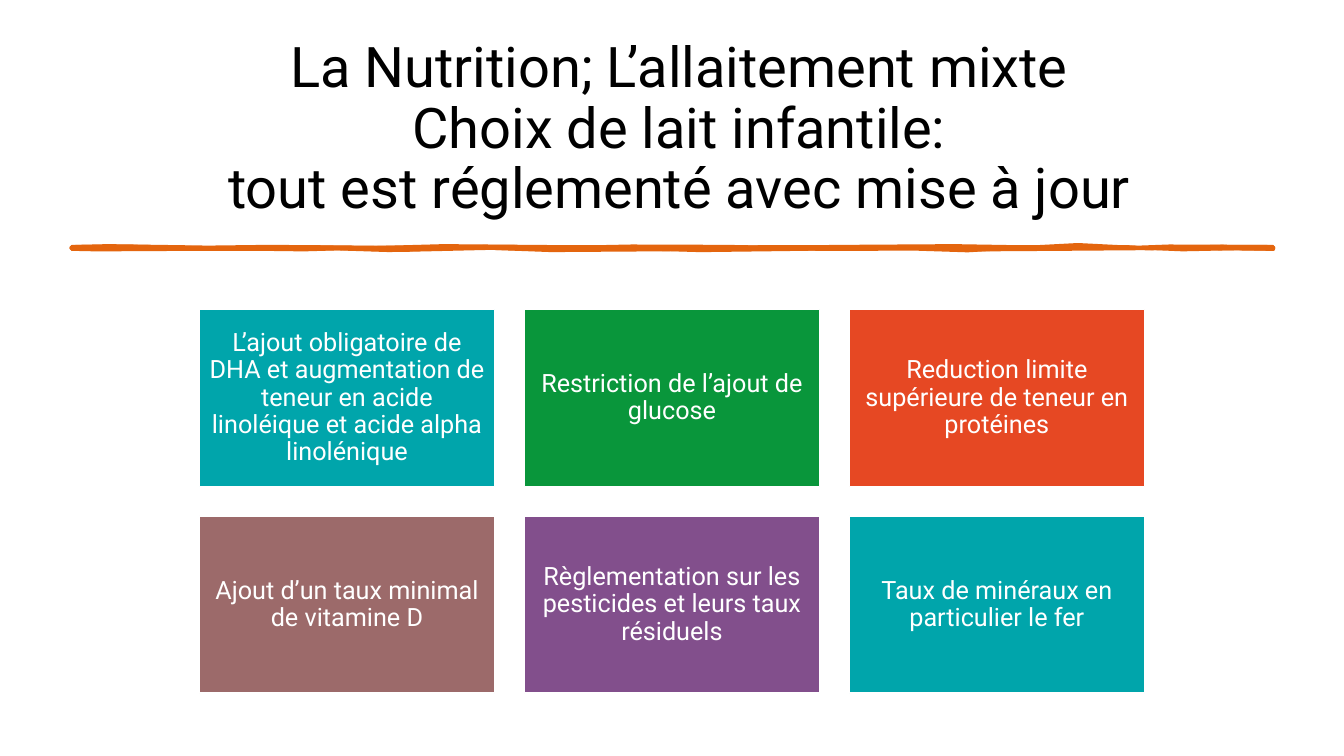
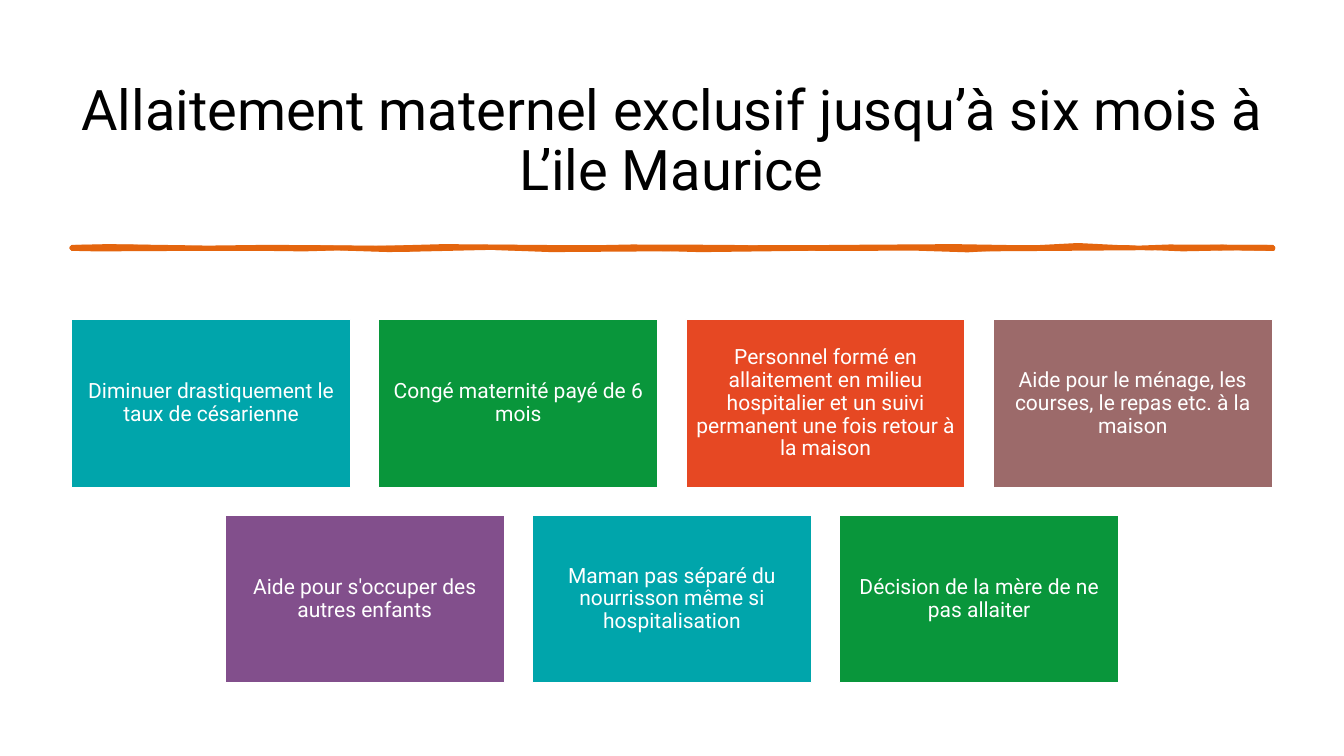
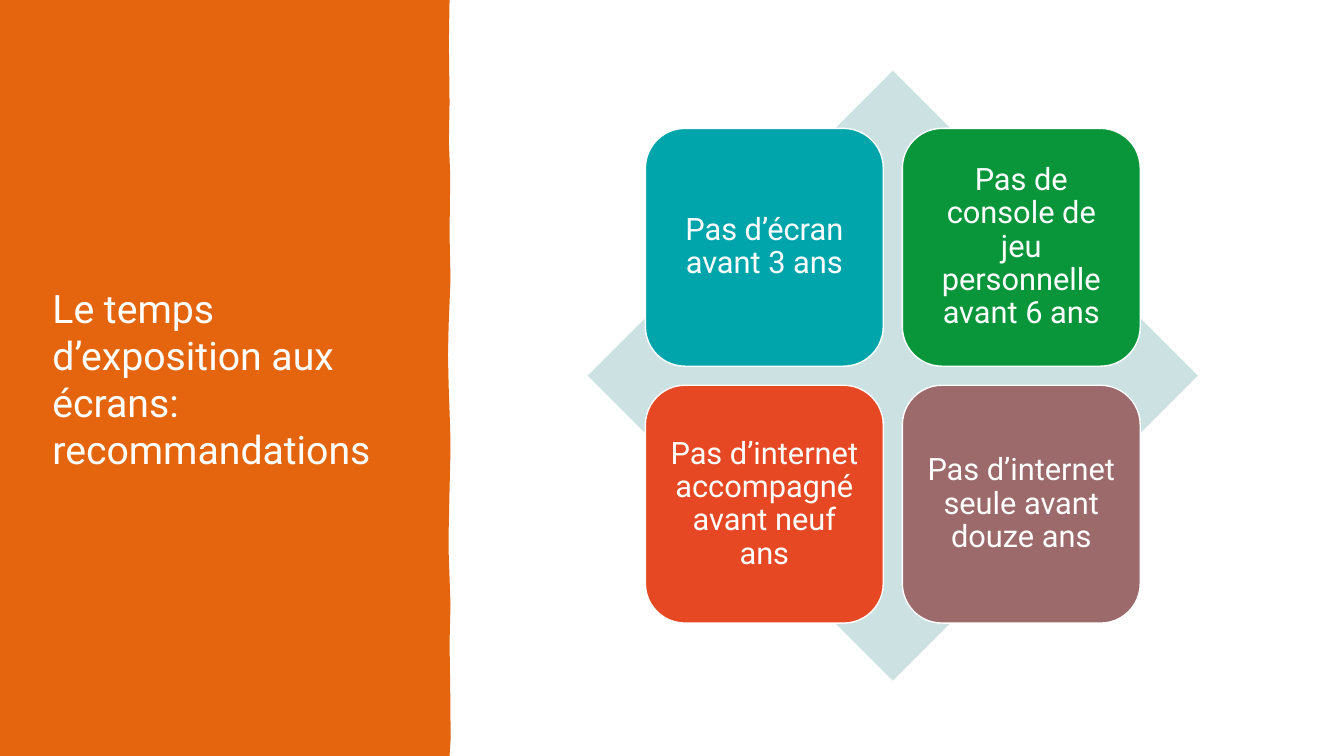
from pptx import Presentation
from pptx.dml.color import RGBColor
from pptx.enum.shapes import MSO_SHAPE
from pptx.enum.text import MSO_ANCHOR, MSO_AUTO_SIZE, PP_ALIGN
from pptx.util import Emu, Inches, Pt

RECTANGLE = MSO_SHAPE.RECTANGLE
ROUNDED = MSO_SHAPE.ROUNDED_RECTANGLE
DIAMOND = MSO_SHAPE.DIAMOND
MIDDLE = MSO_ANCHOR.MIDDLE
NO_AUTOFIT = MSO_AUTO_SIZE.NONE
CENTER = PP_ALIGN.CENTER
LEFT = PP_ALIGN.LEFT

FONT = "Roboto"
COLORS = {
    "black": "000000",
    "white": "FFFFFF",
    "orange": "E4650E",
    "mist": "CCE1E2",
    "teal": "00A5AB",
    "green": "09963B",
    "red": "E64823",
    "rose": "9C6A6A",
    "purple": "824F8C",
}
TILE_COLORS = ["teal", "green", "red", "rose", "purple"]

RULE_STRANDS = [
    [(5.33, 32.93), (7.2, 33), (14.7, 32.93), (18.3, 32.9), (22.6, 33),
     (25.5, 32.85), (30, 33.07), (36.5, 32.8), (41, 32.97), (45.5, 32.75),
     (52.1, 33.1), (58, 32.97), (62.9, 32.85), (68, 32.75), (73, 33),
     (79, 32.93), (88, 32.8), (94.73, 32.93),
     (94.73, 32.67), (90.9, 32.63), (85.4, 32.87), (80.2, 32.4),
     (76.5, 32.75), (67, 32.7), (60, 32.67), (56, 32.7), (47, 32.67),
     (41, 32.67), (33, 32.55), (28, 32.8), (22, 32.67), (16, 32.87),
     (9.5, 32.6), (5.33, 32.67)],
    [(5.33, 32.93), (18, 32.93), (25, 32.87), (29, 33.1), (35, 32.7),
     (41, 33.1), (49, 33), (58, 32.87), (62, 32.95), (68, 32.9),
     (72, 33.13), (76, 32.7), (84, 32.7), (88, 33), (92, 32.85),
     (94.73, 32.93),
     (94.73, 32.67), (87, 32.6), (84, 32.8), (77.5, 32.75), (71, 32.55),
     (63, 32.65), (57, 32.75), (54, 32.65), (47, 32.6), (43, 32.75),
     (37, 32.65), (32, 32.75), (27, 32.75), (20, 32.65), (15.5, 32.75),
     (8, 32.55), (5.33, 32.67)],
]
PANEL_OUTLINE = [
    (0, 0), (33.45, 0), (33.4, 5.6), (33.45, 13.6), (33.4, 18.8),
    (33.5, 23.2), (33.45, 31), (33.52, 37), (33.38, 43), (33.33, 47),
    (33.38, 51), (33.5, 57), (33.52, 59.5), (33.45, 64.8), (33.38, 70.4),
    (33.38, 73), (33.52, 80), (33.45, 85), (33.5, 91.3), (33.53, 97.7),
    (33.45, 100), (0, 100),
]


class Deck:
    """Hold the shared style and the current slide, with lengths in percent of the slide."""

    def __init__(self):
        self.presentation = Presentation()
        self.presentation.slide_width = Inches(13.33)
        self.presentation.slide_height = Inches(7.5)
        self.slide = None

    def x(self, share):
        return Emu(round(self.presentation.slide_width * share / 100))

    def y(self, share):
        return Emu(round(self.presentation.slide_height * share / 100))

    def color(self, name):
        return RGBColor.from_string(COLORS[name])

    def add_slide(self):
        layout = self.presentation.slide_layouts[5]
        self.slide = self.presentation.slides.add_slide(layout)

    def fill_text(self, frame, text, size, color, alignment, spacing):
        frame.word_wrap = True
        frame.auto_size = NO_AUTOFIT
        frame.vertical_anchor = MIDDLE
        paragraph = frame.paragraphs[0]
        paragraph.alignment = alignment
        paragraph.line_spacing = spacing
        for index, line in enumerate(text.split("\n")):
            if index:
                paragraph.add_line_break()
            run = paragraph.add_run()
            run.text = line
            run.font.name = FONT
            run.font.size = Pt(size)
            run.font.color.rgb = self.color(color)

    def title(self, text, left, top, width, height, size=40, color="black",
              alignment=CENTER, spacing=0.9):
        title = self.slide.shapes.title
        title.left, title.top = self.x(left), self.y(top)
        title.width, title.height = self.x(width), self.y(height)
        self.fill_text(title.text_frame, text, size, color, alignment, spacing)
        self.slide.shapes._spTree.append(title._element)

    def paint(self, shape, fill, line=None, weight=1):
        shape.shadow.inherit = False
        shape.fill.solid()
        shape.fill.fore_color.rgb = self.color(fill)
        if line:
            shape.line.color.rgb = self.color(line)
            shape.line.width = Pt(weight)
        else:
            shape.line.fill.background()

    def outline(self, points, line=None, weight=1):
        corners = [(self.x(x), self.y(y)) for x, y in points]
        builder = self.slide.shapes.build_freeform(*corners[0])
        builder.add_line_segments(corners[1:])
        self.paint(builder.convert_to_shape(), "orange", line, weight)

    def brush_rule(self):
        for strand in RULE_STRANDS:
            self.outline(strand, "orange", 2.75)

    def diamond(self, center_x, center_y, width):
        side = self.x(width)
        shape = self.slide.shapes.add_shape(
            DIAMOND, self.x(center_x) - side // 2,
            self.y(center_y) - side // 2, side, side)
        self.paint(shape, "mist")

    def tiles(self, rows, center_x, center_y, width, size,
              kind=RECTANGLE, aspect=0.6, gap=0.1):
        tile_width = self.x(width)
        tile_height = round(tile_width * aspect)
        space = round(tile_width * gap)
        block = len(rows) * (tile_height + space) - space
        top = self.y(center_y) - block // 2
        number = 0
        for row in rows:
            span = len(row) * (tile_width + space) - space
            left = self.x(center_x) - span // 2
            for text in row:
                shape = self.slide.shapes.add_shape(
                    kind, left, top, tile_width, tile_height)
                self.paint(shape, TILE_COLORS[number % len(TILE_COLORS)], "white")
                frame = shape.text_frame
                frame.margin_left = frame.margin_right = Pt(size * 0.3)
                frame.margin_top = frame.margin_bottom = Pt(size * 0.3)
                self.fill_text(frame, text, size, "white", CENTER, 0.9)
                left += tile_width + space
                number += 1
            top += tile_height + space


def main():
    deck = Deck()

    deck.add_slide()
    deck.title("La Nutrition; L’allaitement mixte\nChoix de lait infantile:\n"
               "tout est réglementé avec mise à jour", 5.18, 1.87, 90.7, 30.67)
    deck.brush_rule()
    deck.tiles([
        ["L’ajout obligatoire de DHA et augmentation de teneur en acide "
         "linoléique et acide alpha linolénique",
         "Restriction de l’ajout de glucose",
         "Reduction limite supérieure de teneur en protéines"],
        ["Ajout d’un taux minimal de vitamine D",
         "Règlementation sur les pesticides et leurs taux résiduels",
         "Taux de minéraux en particulier le fer"],
    ], 50, 66.3, 21.98, 18)

    deck.add_slide()
    deck.title("Allaitement maternel exclusif jusqu’à six mois à L’ile Maurice",
               5.18, 9.2, 89.57, 19.2)
    deck.brush_rule()
    deck.tiles([
        ["Diminuer drastiquement le taux de césarienne",
         "Congé maternité payé de 6 mois",
         "Personnel formé en allaitement en milieu hospitalier et un suivi "
         "permanent une fois retour à la maison",
         "Aide pour le ménage, les courses, le repas etc. à la maison"],
        ["Aide pour s'occuper des autres enfants",
         "Maman pas séparé du nourrisson même si hospitalisation",
         "Décision de la mère de ne pas allaiter"],
    ], 50, 66.3, 20.78, 15)

    deck.add_slide()
    deck.outline(PANEL_OUTLINE)
    deck.title("Le temps d’exposition aux écrans:\nrecommandations",
               3.15, 9.33, 27.53, 81.47, 28, "white", LEFT, 1.0)
    deck.diamond(66.43, 49.7, 45.39)
    deck.tiles([
        ["Pas d’écran avant 3 ans",
         "Pas de console de jeu personnelle avant 6 ans"],
        ["Pas d’internet accompagné avant neuf ans",
         "Pas d’internet seule avant douze ans"],
    ], 66.43, 49.7, 17.7, 22, ROUNDED, 1, 0.08)

    deck.presentation.save("out.pptx")


if __name__ == "__main__":
    main()
